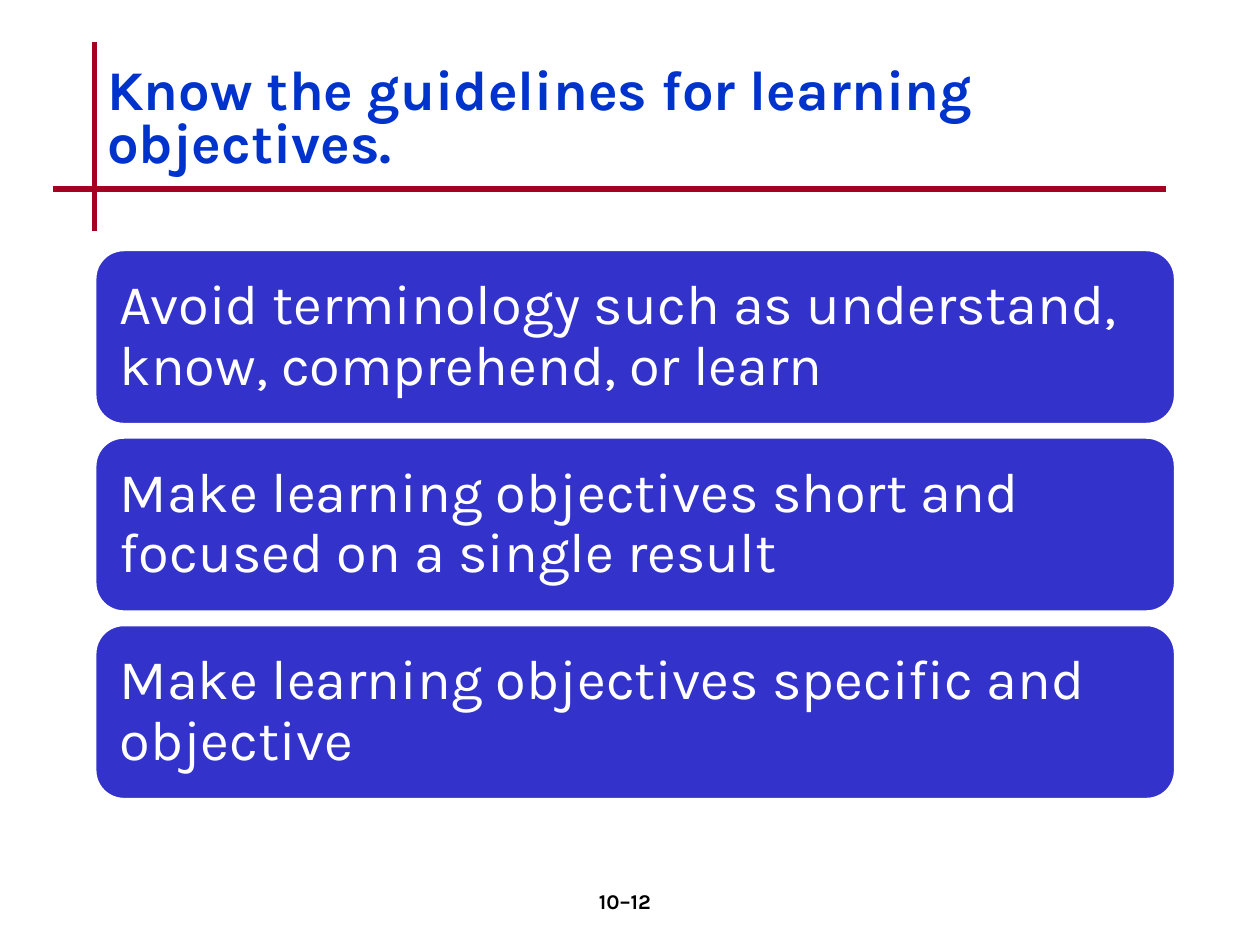
from dataclasses import dataclass

from lxml import etree
from pptx import Presentation
from pptx import util as u
from pptx.dml.color import RGBColor
from pptx.enum import shapes, text
from pptx.oxml.ns import qn

FONT = "Karla"
WHITE, BLUE, RED = "FFFFFF", "3333CC", "A50021"
LEFT = 1.91  # shared left edge, in cm
TOP, STEP = 5.03, 3.78  # first card and card pitch, in cm


@dataclass
class Box:
    x: float
    y: float
    w: float
    h: float

    def place(self) -> tuple:
        return tuple(u.Cm(n) for n in (self.x, self.y, self.w, self.h))


@dataclass
class Style:
    size: int
    color: str
    bold: bool = False
    space: float = 1.0
    align: text.PP_ALIGN = text.PP_ALIGN.LEFT
    anchor: text.MSO_ANCHOR = text.MSO_ANCHOR.MIDDLE


HEAD = Style(32, "0033CC", bold=True, space=0.8)
CARD = Style(32, WHITE, space=0.9)
PAGE = Style(12, "000000", bold=True, align=text.PP_ALIGN.CENTER,
             anchor=text.MSO_ANCHOR.TOP)

POINTS = [
    "Avoid terminology such as understand, know, comprehend, or learn",
    "Make learning objectives short and focused on a single result",
    "Make learning objectives specific and objective",
]


def tint(code: str) -> RGBColor:
    return RGBColor.from_string(code)


def write(frame, words: str, style: Style) -> None:
    frame.word_wrap = True
    frame.vertical_anchor = style.anchor
    para = frame.paragraphs[0]
    para.text = words
    para.alignment = style.align
    para.line_spacing = style.space
    font = para.font
    font.name, font.size, font.bold = FONT, u.Pt(style.size), style.bold
    font.color.rgb = tint(style.color)


def label(slide, box: Box, words: str, style: Style) -> None:
    write(slide.shapes.add_textbox(*box.place()).text_frame, words, style)


def rule(slide, x1: float, y1: float, x2: float, y2: float) -> None:
    ends = (u.Cm(n) for n in (x1, y1, x2, y2))
    line = slide.shapes.add_connector(shapes.MSO_CONNECTOR.STRAIGHT, *ends)
    line.line.color.rgb = tint(RED)
    line.line.width = u.Pt(3)
    etree.SubElement(line._element.spPr, qn("a:effectLst"))


def card(slide, box: Box, words: str) -> None:
    shape = slide.shapes.add_shape(
        shapes.MSO_SHAPE.ROUNDED_RECTANGLE, *box.place())
    shape.shadow.inherit = False
    shape.fill.solid()
    shape.fill.fore_color.rgb = tint(BLUE)
    shape.line.color.rgb = tint(WHITE)
    shape.line.width = u.Pt(2)
    frame = shape.text_frame
    frame.margin_left = frame.margin_right = u.Cm(0.33)
    frame.margin_top = frame.margin_bottom = u.Cm(0.33)
    write(frame, words, CARD)


def main() -> None:
    deck = Presentation()
    deck.slide_width, deck.slide_height = u.Cm(25.4), u.Cm(19.05)
    slide = deck.slides.add_slide(deck.slide_layouts[6])

    # Crossed rules
    rule(slide, LEFT, 0.85, LEFT, 4.66)
    rule(slide, 1.06, 3.81, 23.5, 3.81)

    # Guideline cards
    for i, words in enumerate(POINTS):
        card(slide, Box(LEFT, TOP + i * STEP, 21.79, 3.53), words)

    # Title and page number
    label(slide, Box(LEFT, 0.85, 21.59, 3.18),
          "Know the guidelines for learning objectives.", HEAD)
    label(slide, Box(9.96, 17.78, 5.28, 1.27), "10–12", PAGE)

    deck.save("out.pptx")


if __name__ == "__main__":
    main()
